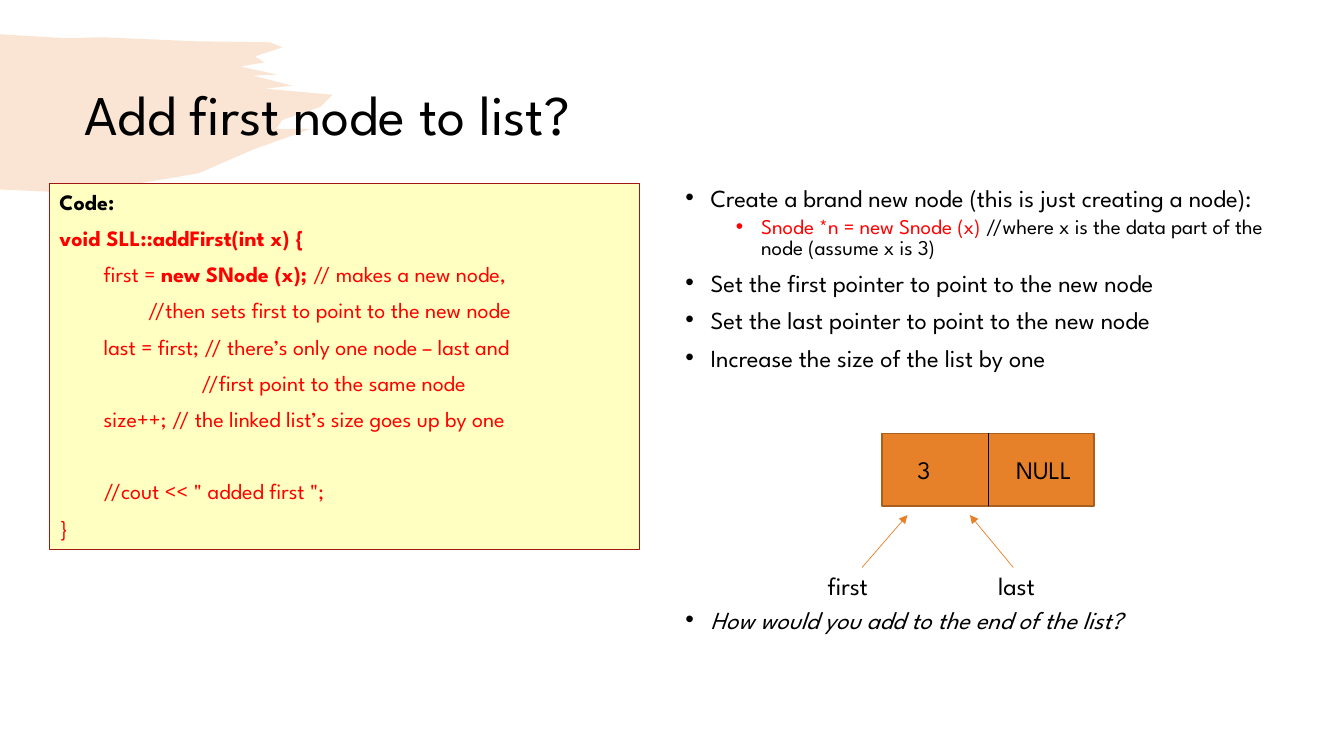
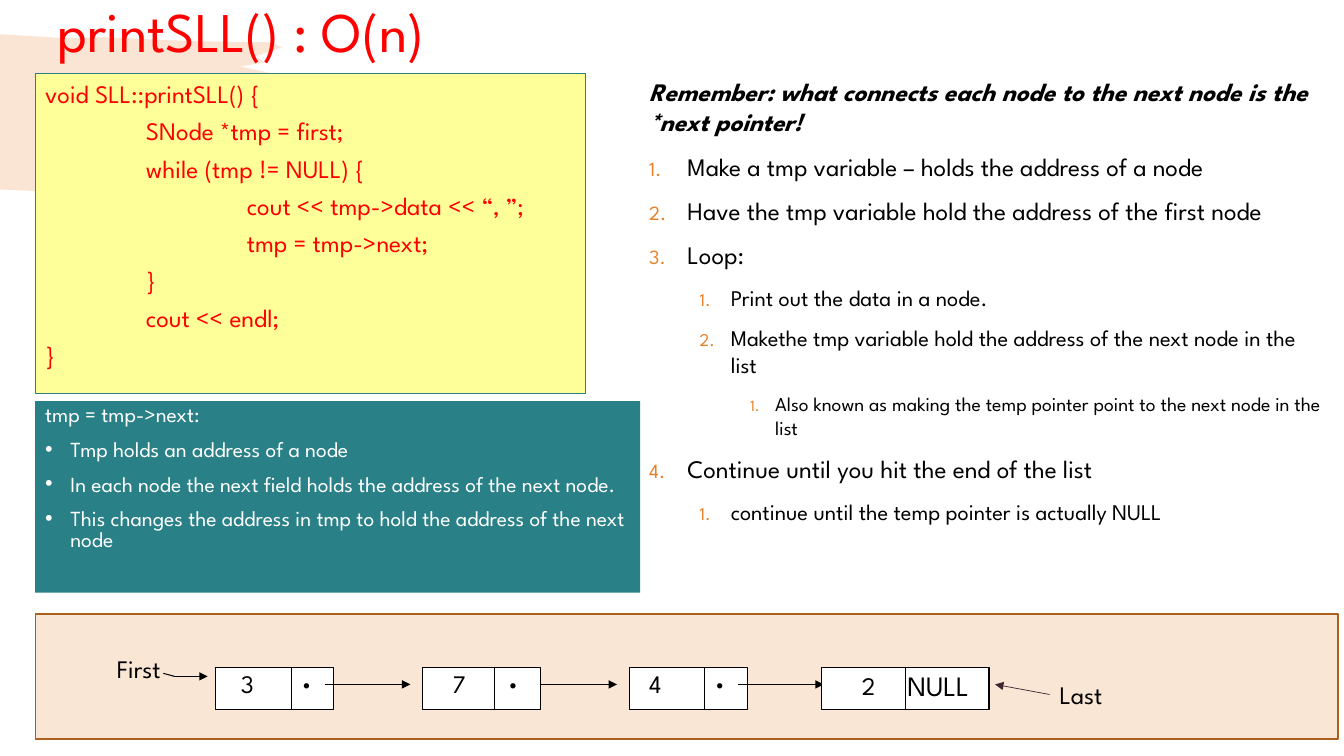
from pptx import Presentation
from pptx.dml.color import RGBColor
from pptx.enum.shapes import MSO_CONNECTOR, MSO_SHAPE
from pptx.enum.text import MSO_ANCHOR, MSO_AUTO_SIZE, PP_ALIGN
from pptx.oxml.ns import qn
from pptx.util import Emu, Pt
from lxml import etree

PX = 9144
FONT = "League Spartan"
RECTANGLE = MSO_SHAPE.RECTANGLE
STRAIGHT = MSO_CONNECTOR.STRAIGHT
TOP, MIDDLE = MSO_ANCHOR.TOP, MSO_ANCHOR.MIDDLE
LEFT = PP_ALIGN.LEFT
NO_AUTOFIT = MSO_AUTO_SIZE.NONE
TOP_SIDE, BOTTOM_SIDE = 0, 2

COLORS = {
    "black": "000000", "white": "FFFFFF", "red": "FF0000",
    "orange": "E78129", "brown": "AB5F1E", "peach": "FAE6D4",
    "cream": "FFFFC1", "yellow": "FFFF99", "maroon": "A01811",
    "teal": "298087", "plum": "412431",
}

BRUSH_OUTLINE = [
    (0, 34), (66, 38), (102, 37), (194, 41), (268, 42), (280, 47), (253, 56),
    (262, 62), (238, 66), (275, 74), (251, 75), (290, 85), (263, 88), (330, 94),
    (318, 106), (280, 119), (274, 128), (308, 128), (252, 148), (197, 172),
    (102, 188), (65, 191), (0, 188),
]


def rgb(name):
    return RGBColor.from_string(COLORS[name])


def to_emu(*lengths):
    return [Emu(length * PX) for length in lengths]


def add_bullet(paragraph, kind, color=None, percent=None):
    properties = paragraph._p.get_or_add_pPr()
    if color:
        bullet_color = etree.SubElement(properties, qn("a:buClr"))
        etree.SubElement(bullet_color, qn("a:srgbClr"), val=COLORS[color])
    if percent:
        etree.SubElement(properties, qn("a:buSzPct"), val=str(percent * 1000))
    if kind == "number":
        etree.SubElement(properties, qn("a:buAutoNum"), type="arabicPeriod")
    else:
        etree.SubElement(properties, qn("a:buFont"), typeface="Arial")
        etree.SubElement(properties, qn("a:buChar"), char=kind)


def write_run(paragraph, text, style):
    run = paragraph.add_run()
    run.text = text
    font = {"name": FONT, "size": Pt(style["size"]),
            "bold": style.get("bold", False), "italic": style.get("italic", False)}
    for attribute, value in font.items():
        setattr(run.font, attribute, value)
    run.font.color.rgb = rgb(style.get("color", "black"))


def write_text(frame, paragraphs, base, anchor=TOP):
    frame_format = {"word_wrap": True, "auto_size": NO_AUTOFIT, "vertical_anchor": anchor}
    for attribute, value in frame_format.items():
        setattr(frame, attribute, value)
    for index, (content, changes) in enumerate(paragraphs):
        style = {**base, **changes}
        paragraph = frame.paragraphs[0] if index == 0 else frame.add_paragraph()
        paragraph_format = {"alignment": LEFT, "level": style.get("level", 0),
                            "space_before": Pt(style.get("before", 0)),
                            "line_spacing": style.get("spacing", 1.0)}
        for attribute, value in paragraph_format.items():
            setattr(paragraph, attribute, value)
        properties = paragraph._p.get_or_add_pPr()
        properties.set("marL", str(style.get("margin", 0) * PX))
        properties.set("indent", str(-style.get("hanging", 0) * PX))
        if "bullet" in style:
            add_bullet(paragraph, *style["bullet"])
        runs = [(content, {})] if isinstance(content, str) else content
        for text, run_changes in runs:
            write_run(paragraph, text, {**style, **run_changes})


def add_text(slide, box, paragraphs, base):
    shape = slide.shapes.add_textbox(*to_emu(*box))
    write_text(shape.text_frame, paragraphs, base)


def add_label(slide, left, top, text, size=18):
    add_text(slide, (left, top, 95, 40), [(text, {})], {"size": size})


def add_panel(slide, box, fill, line=None, width=0.75):
    shape = slide.shapes.add_shape(RECTANGLE, *to_emu(*box))
    shape.shadow.inherit = False
    shape.fill.solid()
    shape.fill.fore_color.rgb = rgb(fill)
    if line:
        shape.line.color.rgb = rgb(line)
        shape.line.width = Pt(width)
    else:
        shape.line.fill.background()
    return shape


def add_line(slide, start, end, color="black", width=0.75, arrow=False):
    connector = slide.shapes.add_connector(STRAIGHT, *to_emu(*start, *end))
    connector.line.color.rgb = rgb(color)
    connector.line.width = Pt(width)
    properties = connector.element.spPr
    if arrow:
        etree.SubElement(properties.find(qn("a:ln")), qn("a:tailEnd"), type="triangle")
    etree.SubElement(properties, qn("a:effectLst"))
    return connector


def add_node(slide, box, divider, fill="white", line="black", width=0.75, divider_width=0.75):
    left, top, node_width, height = box
    node = add_panel(slide, box, fill, line, width)
    middle = left + divider
    connector = add_line(slide, (middle, top), (middle, top + height), width=divider_width)
    if 2 * divider == node_width:
        connector.begin_connect(node, TOP_SIDE)
        connector.end_connect(node, BOTTOM_SIDE)


def add_brush_to_layout(slide):
    builder = slide.shapes.build_freeform(*BRUSH_OUTLINE[0], scale=PX)
    builder.add_line_segments(BRUSH_OUTLINE[1:], close=True)
    brush = builder.convert_to_shape()
    brush.shadow.inherit = False
    brush.fill.solid()
    brush.fill.fore_color.rgb = rgb("orange")
    brush.line.fill.background()
    fill_color = brush.element.spPr.find(qn("a:solidFill"))[0]
    etree.SubElement(fill_color, qn("a:alpha"), val="20000")
    slide.slide_layout.shapes.element.append(brush.element)


def set_title(slide, box, text, color="black"):
    title = slide.shapes.title
    title.left, title.top, title.width, title.height = to_emu(*box)
    write_text(title.text_frame, [(text, {})],
               {"size": 40, "color": color, "spacing": 0.9}, MIDDLE)


def add_code_panel(slide, box, fill, line, paragraphs, base):
    panel = add_panel(slide, box, fill, line)
    write_text(panel.text_frame, paragraphs, base)


def add_first_node_diagram(slide, box):
    left, top = box[:2]
    add_node(slide, (left + 64, top, 210, 72), 105, "orange", "brown", 1, 0.5)
    for text, x, y in (("3", 89, 16), ("NULL", 187, 16), ("first", 0, 131), ("last", 169, 131)):
        add_label(slide, left + x, top + y, text)
    for start, end in ((44, 89), (194, 151)):
        add_line(slide, (left + start, top + 133), (left + end, top + 81), "orange", 0.5, True)


def add_linked_list(slide, box):
    left, top = box[:2]
    add_panel(slide, box, "peach", "brown", 1)
    node_left = left + 179
    node_pitch = 205
    arrow_top = top + 70
    for value, divider, value_left, arrow_left in (("3", 75, 15, 108), ("7", 71, 20, 117),
                                                   ("4", 75, 10, 108)):
        add_node(slide, (node_left, top + 53, 117, 42), divider)
        add_label(slide, node_left + value_left, top + 49, value)
        add_label(slide, node_left + 74, top + 49, "•")
        add_line(slide, (node_left + arrow_left, arrow_top),
                 (node_left + node_pitch - 12, arrow_top), arrow=True)
        node_left += node_pitch
    last_left = node_left - 14
    add_node(slide, (last_left, top + 53, 166, 42), 83)
    add_label(slide, last_left + 30, top + 51, "2")
    add_label(slide, last_left + 75, top + 49, "NULL", 20)
    bend = (left + 138, top + 62)
    add_line(slide, (left + 127, top + 59), bend)
    add_line(slide, bend, (left + 171, top + 62), arrow=True)
    add_line(slide, (left + 1006, top + 80), (left + 952, arrow_top), "plum", 0.5, True)
    add_label(slide, left + 71, top + 34, "First")
    add_label(slide, left + 1006, top + 60, "Last")


def build_add_first(slide):
    set_title(slide, (74, 67, 940, 99), "Add first node to list?")
    bullets = {"size": 17.5, "margin": 25, "hanging": 25, "spacing": 0.8,
               "before": 10, "bullet": ("•",)}
    add_text(slide, (670, 182, 601, 210), [
        ("Create a brand new node (this is just creating a node):", {}),
        ([("Snode *n = new Snode (x) ", {"color": "red"}),
          ("//where x is the data part of the node (assume x is 3)", {})],
         {"level": 1, "margin": 75, "size": 15, "before": 5}),
        ("Set the first pointer to point to the new node", {}),
        ("Set the last pointer to point to the new node", {}),
        ("Increase the size of the list by one", {}),
    ], bullets)
    add_text(slide, (670, 601, 601, 40),
             [("How would you add to the end of the list?", {"italic": True})], bullets)
    add_first_node_diagram(slide, (811, 430, 274, 171))
    step = {"margin": 44}
    add_code_panel(slide, (49, 182, 585, 363), "cream", "maroon", [
        ("Code:", {"bold": True, "color": "black"}),
        ("void SLL::addFirst(int x) {", {"bold": True}),
        ([("first = ", {}), ("new SNode (x); ", {"bold": True}),
          ("// makes a new node,", {})], step),
        ("//then sets first to point to the new node", {"margin": 88}),
        ("last = first; // there’s only one node – last and", step),
        ("//first point to the same node", {"margin": 141}),
        ("size++; // the linked list’s size goes up by one", step),
        ("//cout << \" added first \";", {**step, "before": 32.8}),
        ("}", {}),
    ], {"size": 15.7, "color": "red", "before": 7})


def build_print_list(slide):
    set_title(slide, (47, 0, 940, 68), "printSLL() : O(n)", "red")
    add_linked_list(slide, (35, 609, 1292, 124))
    outer, inner = {"margin": 100}, {"margin": 200}
    add_code_panel(slide, (35, 73, 546, 317), "yellow", "teal", [
        ("void SLL::printSLL() {", {}),
        ("SNode *tmp = first;", outer),
        ("while (tmp != NULL) {", outer),
        ("cout << tmp->data << “, ”;", inner),
        ("tmp = tmp->next;", inner),
        ("}", outer),
        ("cout << endl;", outer),
        ("}", {}),
    ], {"size": 18, "color": "red", "before": 5})
    numbered = {"bullet": ("number", "orange", 80)}
    step = {**numbered, "margin": 38, "hanging": 38}
    substep = {**numbered, "level": 1, "margin": 81, "hanging": 31, "size": 16}
    detail = {**numbered, "level": 2, "margin": 125, "hanging": 25, "size": 14}
    add_text(slide, (634, 71, 692, 516), [
        ("Remember: what connects each node to the next node is the *next pointer!",
         {"bold": True, "italic": True}),
        ("Make a tmp variable – holds the address of a node", step),
        ("Have the tmp variable hold the address of the first node", step),
        ("Loop:", step),
        ("Print out the data in a node.", substep),
        ("Makethe tmp variable hold the address of the next node in the list", substep),
        ("Also known as making the temp pointer point to the next node in the list", detail),
        ("Continue until you hit the end of the list", step),
        ("continue until the temp pointer is actually NULL", substep),
    ], {"size": 18, "before": 10})
    point = {"margin": 25, "hanging": 25, "bullet": ("•",)}
    add_code_panel(slide, (35, 398, 600, 190), "teal", None, [
        ("tmp = tmp->next:", {}),
        ("Tmp holds an address of a node", point),
        ("In each node the next field holds the address of the next node.", point),
        ("This changes the address in tmp to hold the address of the next node", point),
    ], {"size": 15.4, "color": "white", "before": 10, "spacing": 0.8})


def main():
    presentation = Presentation()
    presentation.slide_width, presentation.slide_height = to_emu(1333, 750)
    layout = presentation.slide_layouts[5]
    slides = [presentation.slides.add_slide(layout) for _ in range(2)]
    add_brush_to_layout(slides[0])
    for build, slide in zip((build_add_first, build_print_list), slides):
        build(slide)
    presentation.save("out.pptx")


if __name__ == "__main__":
    main()
